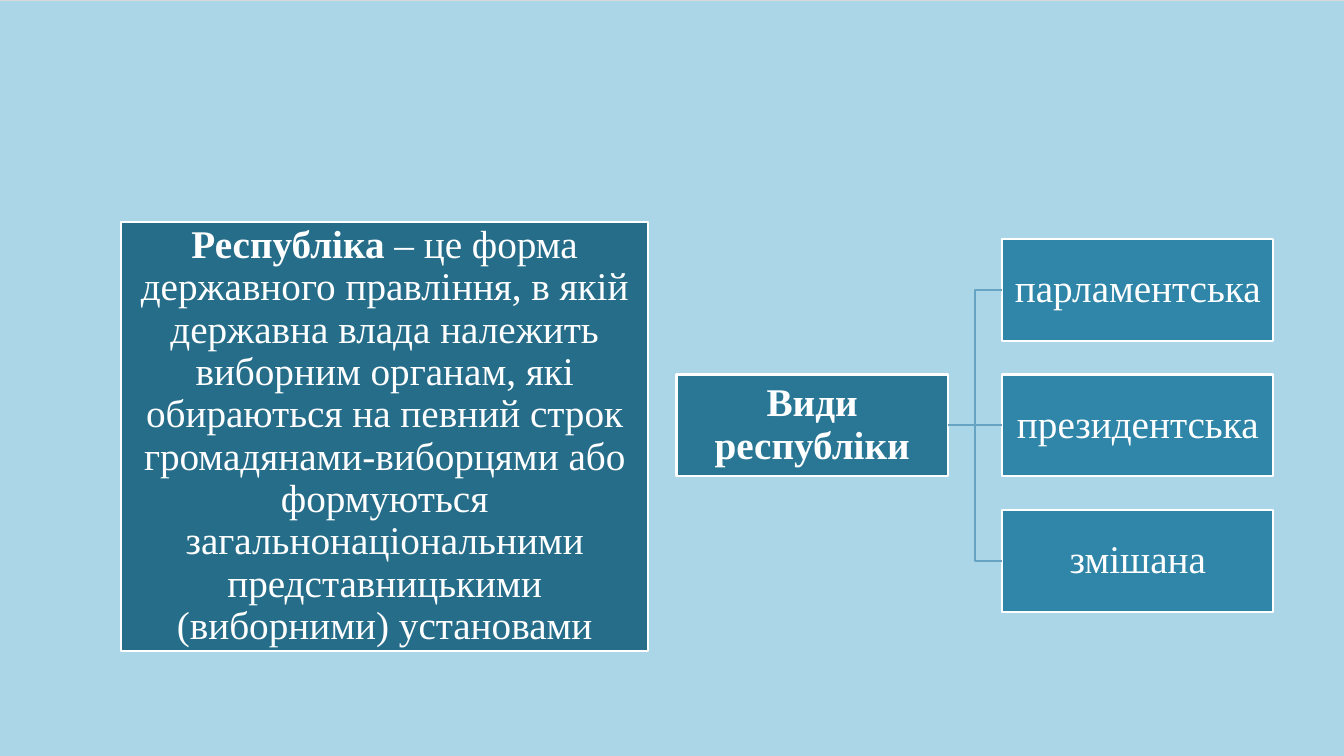
from dataclasses import dataclass

from pptx import Presentation
from pptx.dml.color import RGBColor
from pptx.enum import dml, shapes, text
from pptx.oxml import ns, xmlchemy
from pptx.util import Inches, Pt


@dataclass(frozen=True)
class Theme:
    page: RGBColor = RGBColor.from_string("AAD6E7")
    page_pattern: RGBColor = RGBColor.from_string("D9D9D9")
    definition: RGBColor = RGBColor.from_string("266D8A")
    root: RGBColor = RGBColor.from_string("2A7795")
    kind: RGBColor = RGBColor.from_string("2F86A9")
    branch: RGBColor = RGBColor.from_string("67A3C2")
    light: RGBColor = RGBColor.from_string("FFFFFF")
    font: str = "Times New Roman"
    size: Pt = Pt(28)
    line: Pt = Pt(1.5)


@dataclass(frozen=True)
class Card:
    left: float
    top: float
    width: float
    height: float
    fill: RGBColor
    bold_text: str = ""
    plain_text: str = ""
    inset: float = 0.02


THEME = Theme()
NODE_WIDTH, NODE_HEIGHT = 2.69, 1.01
ROOT_LEFT, KIND_LEFT = 6.71, 9.94
FIRST_KIND_TOP, KIND_STEP = 2.37, 1.345
KINDS = ("парламентська", "президентська", "змішана")

DEFINITION = Card(
    1.2, 2.2, 5.23, 4.26, THEME.definition, "Республіка",
    " – це форма державного правління, в якій державна влада належить "
    "виборним органам, які обираються на певний строк "
    "громадянами-виборцями або формуються загальнонаціональними "
    "представницькими (виборними) установами",
    inset=0.12,
)
ROOT = Card(ROOT_LEFT, FIRST_KIND_TOP + KIND_STEP, NODE_WIDTH, NODE_HEIGHT,
            THEME.root, bold_text="Види республіки")
KIND_CARDS = [
    Card(KIND_LEFT, FIRST_KIND_TOP + row * KIND_STEP, NODE_WIDTH, NODE_HEIGHT,
         THEME.kind, plain_text=name)
    for row, name in enumerate(KINDS)
]


def draw_card(page, card: Card):
    box = page.shapes.add_shape(
        shapes.MSO_SHAPE.RECTANGLE, Inches(card.left), Inches(card.top),
        Inches(card.width), Inches(card.height))
    box.shadow.inherit = False
    box.fill.solid()
    box.fill.fore_color.rgb = card.fill
    box.line.color.rgb = THEME.light
    box.line.width = THEME.line

    frame = box.text_frame
    frame.word_wrap = True
    frame.vertical_anchor = text.MSO_ANCHOR.MIDDLE
    frame.margin_left = frame.margin_right = Inches(card.inset)
    frame.margin_top = frame.margin_bottom = Inches(card.inset)

    para = frame.paragraphs[0]
    para.alignment = text.PP_ALIGN.CENTER
    para.line_spacing = 0.9
    para.font.name = THEME.font
    para.font.size = THEME.size
    para.font.color.rgb = THEME.light
    for words, bold in ((card.bold_text, True), (card.plain_text, False)):
        if words:
            span = para.add_run()
            span.text = words
            span.font.bold = bold
    return box


def draw_branch(page, root_box, kind_box) -> None:
    """Join the right side of the root to the left side of a kind."""
    level = root_box.top == kind_box.top
    style = shapes.MSO_CONNECTOR.STRAIGHT if level else shapes.MSO_CONNECTOR.ELBOW
    branch = page.shapes.add_connector(style, 0, 0, 0, 0)
    branch.begin_connect(root_box, 3)
    branch.end_connect(kind_box, 1)
    branch.line.color.rgb = THEME.branch
    branch.line.width = THEME.line
    branch._element.spPr.append(xmlchemy.OxmlElement("a:effectLst"))


def paint_background(page) -> None:
    fill = page.background.fill
    fill.patterned()
    fill.pattern = dml.MSO_PATTERN.DARK_HORIZONTAL
    fill.fore_color.rgb = THEME.page
    fill.back_color.rgb = THEME.page_pattern


def main() -> None:
    deck = Presentation()
    deck.slide_width, deck.slide_height = Inches(13.33), Inches(7.5)
    page = deck.slides.add_slide(deck.slide_layouts.get_by_name("Blank"))
    paint_background(page)
    draw_card(page, DEFINITION)
    root_box = draw_card(page, ROOT)
    for card in KIND_CARDS:
        draw_branch(page, root_box, draw_card(page, card))
    deck.save("out.pptx")


if __name__ == "__main__":
    main()
